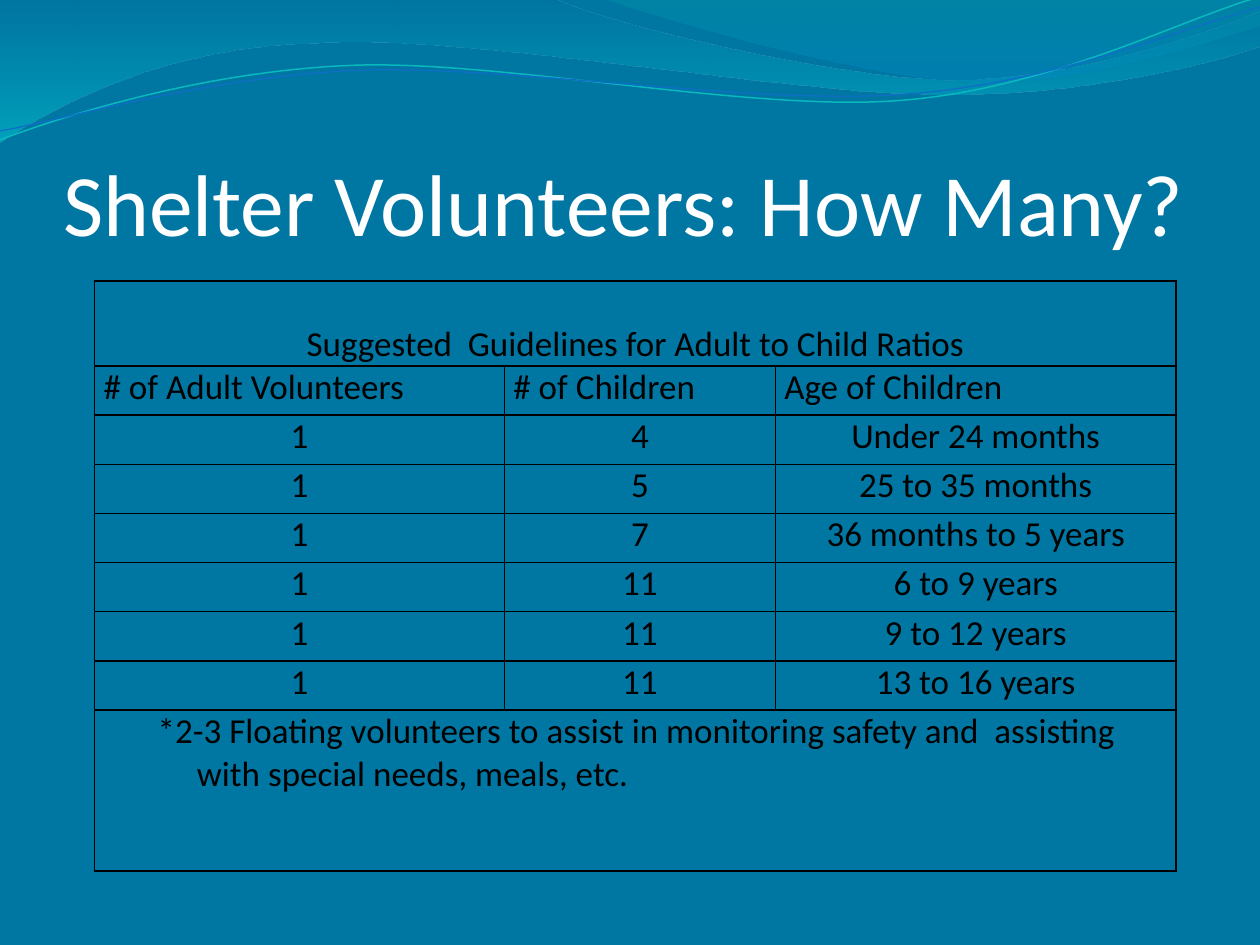
from lxml import etree
from pptx import Presentation
from pptx.dml.color import RGBColor
from pptx.enum.text import MSO_ANCHOR, MSO_AUTO_SIZE, PP_ALIGN
from pptx.oxml import parse_xml
from pptx.oxml.ns import nsdecls, qn
from pptx.util import Cm, Pt

LEFT, CENTER = PP_ALIGN.LEFT, PP_ALIGN.CENTER
TOP, BOTTOM = MSO_ANCHOR.TOP, MSO_ANCHOR.BOTTOM
FONT = "Calibri"
BACKGROUND, WHITE, BLACK = "0076A3", "FFFFFF", "000000"

TITLE = "Shelter Volunteers: How Many?"
GUIDELINES = "Suggested  Guidelines for Adult to Child Ratios"
HEADINGS = ["# of Adult Volunteers", "# of Children", "Age of Children"]
RATIOS = [
    ("1", "4", "Under 24 months"),
    ("1", "5", "25 to 35 months"),
    ("1", "7", "36 months to 5 years"),
    ("1", "11", "6 to 9 years"),
    ("1", "11", "9 to 12 years"),
    ("1", "11", "13 to 16 years"),
]
FOOTNOTE = ("*2-3 Floating volunteers to assist in monitoring safety and  "
            "assisting with special needs, meals, etc.")

COLUMN_WIDTHS = [8.26, 5.46, 8.08]
ROW_HEIGHTS = [1.72] + [0.99] * (1 + len(RATIOS)) + [3.25]

# Each step in cm: two numbers are a line end, six numbers a Bezier curve.
# Gradient stops: position %, colour, opacity %.
BANDS = [
    ([(0, 0), (11.18, -0.03), (12.09, 0.43, 16.87, 1.6, 19.25, 1.6),
      (21.67, 1.6, 24.33, 0.66, 25.4, 0.23), (25.43, 0.91),
      (24.97, 1.12, 22.1, 1.93, 18.95, 1.9), (15.8, 1.9, 9.7, 0.71, 6.53, 0.86),
      (3.28, 0.91, 1.17, 2.11, -0.03, 2.87)],
     [(0, "0074A1", 45), (100, "00C6CF", 55)]),
    ([(12.17, -0.03), (12.93, 0.28, 17.32, 1.57, 19.53, 1.65),
      (21.74, 1.75, 24.41, 0.81, 25.4, 0.53), (25.4, 0)],
     [(0, "00A1A9", 30), (80, "008BBF", 45)]),
]
STRANDS = [
    ([(0, 2.82), (1.22, 2.36, 4.01, 1.45, 7.04, 1.32),
      (10.03, 1.19, 15.06, 2.26, 18.11, 2.03),
      (21.16, 1.8, 23.83, 0.38, 25.35, -0.05)], "0AB8BF", 0.85),
    ([(0, 2.64), (1.19, 2.44, 4.17, 1.55, 7.19, 1.42),
      (10.24, 1.3, 15.16, 2.13, 18.21, 1.9),
      (21.23, 1.7, 23.9, 0.53, 25.4, 0.15)], "0F6FC6", 0.75),
]


def rgb(value):
    return RGBColor.from_string(value)


def add_curve(slide, steps, close):
    """Build the outline through all points, then join triples into Beziers."""
    start, *rest = [(Cm(step[i]), Cm(step[i + 1]))
                    for step in steps for i in range(0, len(step), 2)]
    builder = slide.shapes.build_freeform(*start)
    builder.add_line_segments(rest, close=close)
    curve = builder.convert_to_shape()
    curve.shadow.inherit = False

    segments = iter(list(curve.element.iter(qn("a:lnTo"))))
    for step in steps[1:]:
        segment = next(segments)
        if len(step) == 6:
            segment.tag = qn("a:cubicBezTo")
            for _ in range(2):
                merged = next(segments)
                segment.append(merged[0])
                merged.getparent().remove(merged)
    return curve


def add_band(slide, steps, stops):
    band = add_curve(slide, steps, close=True)
    band.line.fill.background()
    stop_xml = "".join(
        f'<a:gs pos="{pos * 1000}"><a:srgbClr val="{color}">'
        f'<a:alpha val="{opacity * 1000}"/></a:srgbClr></a:gs>'
        for pos, color, opacity in stops)
    band.fill.background()
    no_fill = band.element.spPr.find(qn("a:noFill"))
    no_fill.addprevious(parse_xml(
        f'<a:gradFill {nsdecls("a")}><a:gsLst>{stop_xml}</a:gsLst>'
        '<a:lin ang="5400000" scaled="0"/></a:gradFill>'))
    band.element.spPr.remove(no_fill)


def add_strand(slide, steps, color, width):
    strand = add_curve(slide, steps, close=False)
    strand.fill.background()
    strand.line.color.rgb = rgb(color)
    strand.line.width = Pt(width)


def write(paragraph, text, size, color, align):
    paragraph.alignment = align
    run = paragraph.add_run()
    run.text = text
    run.font.name, run.font.size = FONT, Pt(size)
    run.font.color.rgb = rgb(color)


def set_borders(cell):
    properties = cell._tc.get_or_add_tcPr()
    for index, side in enumerate(("lnL", "lnR", "lnT", "lnB")):
        border = etree.Element(qn(f"a:{side}"), w=str(Pt(1)))
        fill = etree.SubElement(border, qn("a:solidFill"))
        etree.SubElement(fill, qn("a:srgbClr"), val=BLACK)
        properties.insert(index, border)


def fill_cell(cell, text, align=CENTER, anchor=TOP, left=0.18):
    cell.margin_left, cell.margin_right = Cm(left), Cm(0.18)
    cell.margin_top = cell.margin_bottom = 0
    cell.vertical_anchor = anchor
    write(cell.text_frame.paragraphs[0], text, 20, BLACK, align)


def add_title(slide):
    title = slide.shapes.title
    title.left, title.top, title.width, title.height = Cm(1.27), Cm(1.95), Cm(23.06), Cm(3.18)
    frame = title.text_frame
    frame.auto_size = MSO_AUTO_SIZE.NONE
    frame.vertical_anchor = BOTTOM
    frame.margin_left = frame.margin_right = frame.margin_bottom = 0
    write(frame.paragraphs[0], TITLE, 50, WHITE, LEFT)


def add_ratio_table(slide):
    frame = slide.shapes.add_table(
        len(ROW_HEIGHTS), len(COLUMN_WIDTHS), Cm(1.91), Cm(5.66),
        Cm(sum(COLUMN_WIDTHS)), Cm(sum(ROW_HEIGHTS)))
    table = frame.table
    table.first_row = table.horz_banding = False
    for column, width in zip(table.columns, COLUMN_WIDTHS):
        column.width = Cm(width)
    for row, height in zip(table.rows, ROW_HEIGHTS):
        row.height = Cm(height)
    for cell in table.iter_cells():
        cell.fill.background()
        set_borders(cell)

    last_row, last_column = len(ROW_HEIGHTS) - 1, len(COLUMN_WIDTHS) - 1
    for row in (0, last_row):
        table.cell(row, 0).merge(table.cell(row, last_column))
    fill_cell(table.cell(0, 0), GUIDELINES, anchor=BOTTOM)
    for row, texts in enumerate([HEADINGS] + RATIOS, start=1):
        for column, text in enumerate(texts):
            fill_cell(table.cell(row, column), text, LEFT if row == 1 else CENTER)
    footnote = table.cell(last_row, 0)
    fill_cell(footnote, FOOTNOTE, LEFT, left=1.27)
    indent = footnote.text_frame.paragraphs[0]._p.get_or_add_pPr()
    indent.set("marL", str(Cm(0.79)))
    indent.set("indent", str(-Cm(0.79)))


def main():
    deck = Presentation()
    deck.slide_width, deck.slide_height = Cm(25.4), Cm(19.05)
    slide = deck.slides.add_slide(deck.slide_layouts[5])
    slide.background.fill.solid()
    slide.background.fill.fore_color.rgb = rgb(BACKGROUND)
    for band in BANDS:
        add_band(slide, *band)
    for strand in STRANDS:
        add_strand(slide, *strand)
    add_title(slide)
    add_ratio_table(slide)
    deck.save("out.pptx")


if __name__ == "__main__":
    main()
